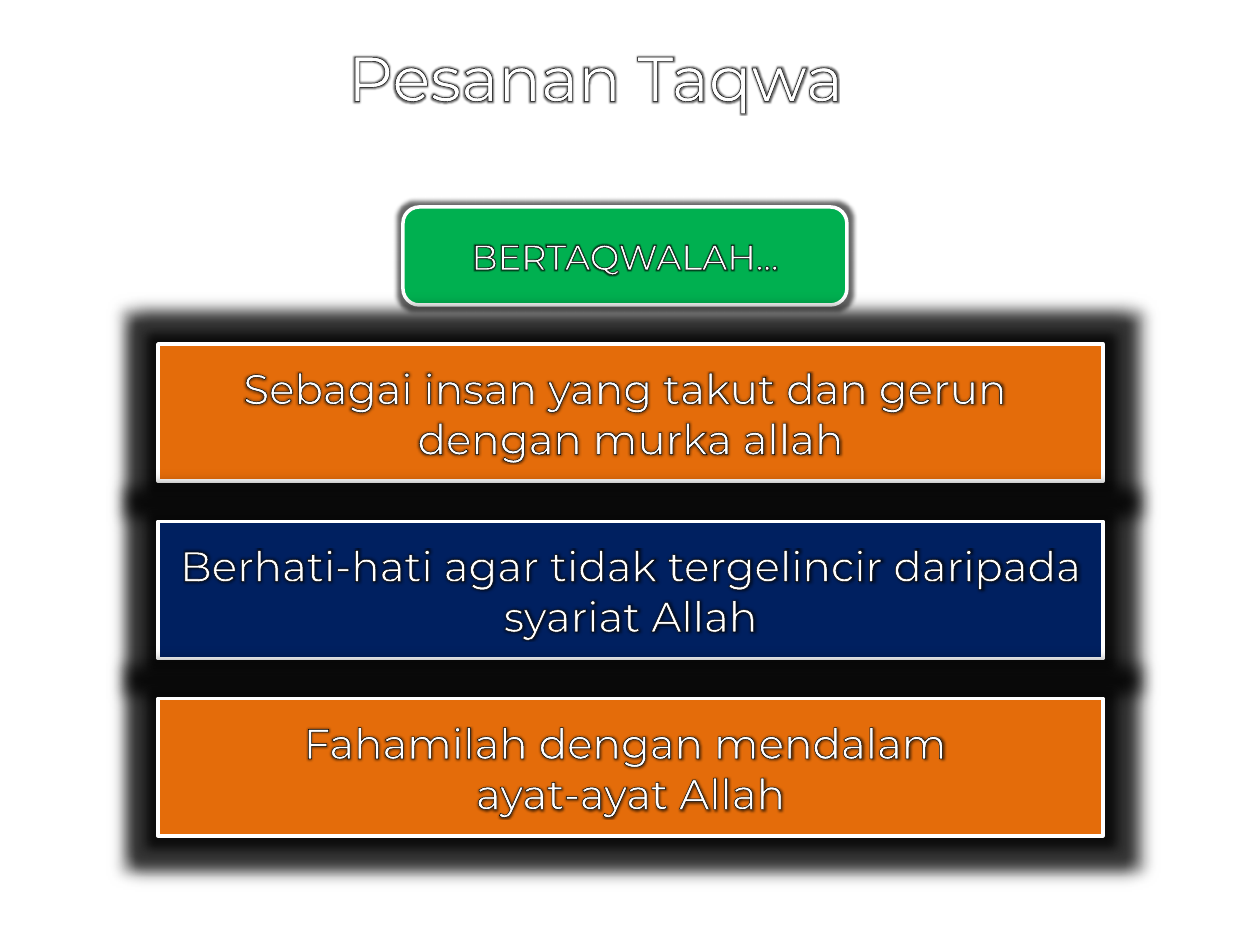
from lxml.etree import SubElement
from pptx import Presentation
from pptx.dml.color import RGBColor
from pptx.enum.shapes import MSO_SHAPE as SHAPE
from pptx.enum.text import MSO_ANCHOR as ANCHOR, MSO_AUTO_SIZE as AUTO, PP_ALIGN as ALIGN
from pptx.oxml.ns import qn
from pptx.util import Pt

SCALE = 914400 / 126
FONT = "Montserrat"
WHITE = RGBColor(0xFF, 0xFF, 0xFF)
BLACK = RGBColor(0x00, 0x00, 0x00)
GREEN = RGBColor(0x00, 0xB0, 0x50)
ORANGE = RGBColor(0xE4, 0x6C, 0x0A)
NAVY = RGBColor(0x00, 0x20, 0x60)

ROWS = [
    (ORANGE, ["Sebagai insan yang takut dan gerun ", "dengan murka allah"]),
    (NAVY, ["Berhati-hati agar tidak tergelincir daripada syariat Allah"]),
    (ORANGE, ["Fahamilah dengan mendalam ", "ayat-ayat Allah"]),
]


def px(n):
    return round(n * SCALE)


def add_colour(parent, colour, alpha=100):
    clr = SubElement(parent, qn("a:srgbClr"), val=str(colour))
    if alpha < 100:
        SubElement(clr, qn("a:alpha"), val=str(alpha * 1000))


def add_glow(parent, radius, alpha, shadow_blur=0):
    """Add a black glow, and a soft shadow when a blur is given."""
    effects = SubElement(parent, qn("a:effectLst"))
    glow = SubElement(effects, qn("a:glow"), rad=str(Pt(radius)))
    add_colour(glow, BLACK, alpha)
    if shadow_blur:
        shadow = SubElement(effects, qn("a:outerShdw"), blurRad=str(Pt(shadow_blur)),
                            sx="102000", sy="110000", algn="ctr", rotWithShape="0")
        add_colour(shadow, BLACK, 70)


def write_lines(tf, lines, size):
    """Write centred white lines with a black outline and glow."""
    tf.word_wrap = True
    for i, line in enumerate(lines):
        p = tf.add_paragraph() if i else tf.paragraphs[0]
        p.alignment = ALIGN.CENTER
        r = p.add_run()
        r.text = line
        rpr = r._r.get_or_add_rPr()
        ln = SubElement(rpr, qn("a:ln"), w=str(Pt(0.75)))
        add_colour(SubElement(ln, qn("a:solidFill")), BLACK)
        add_colour(SubElement(rpr, qn("a:solidFill")), WHITE)
        add_glow(rpr, 3, 60)
        r.font.size = Pt(size)
        r.font.name = FONT


def add_box(slide, kind, box, fill, lines, size, glow, shadow_blur=0):
    sp = slide.shapes.add_shape(kind, *map(px, box))
    sp.fill.solid()
    sp.fill.fore_color.rgb = fill
    sp.line.color.rgb = WHITE
    sp.line.width = Pt(2)
    add_glow(sp._element.spPr, glow, 60, shadow_blur)
    sp.text_frame.vertical_anchor = ANCHOR.MIDDLE
    write_lines(sp.text_frame, lines, size)


def add_rows(slide, box, gap):
    left, top, width, height = box
    row_height = (height - gap * (len(ROWS) - 1)) / len(ROWS)
    for i, (fill, lines) in enumerate(ROWS):
        row = (left, top + i * (row_height + gap), width, row_height)
        add_box(slide, SHAPE.RECTANGLE, row, fill, lines, 24, 11, 5)


def add_title(slide, box):
    title = slide.shapes.title
    title.left, title.top, title.width, title.height = map(px, box)
    tf = title.text_frame
    tf.auto_size = AUTO.SHAPE_TO_FIT_TEXT
    tf.vertical_anchor = ANCHOR.TOP
    write_lines(tf, ["Pesanan Taqwa"], 36)


def main():
    prs = Presentation()
    prs.slide_width, prs.slide_height = px(1260), px(945)
    slide = prs.slides.add_slide(prs.slide_layouts[5])
    add_title(slide, (69, 32, 1053, 89))
    add_box(slide, SHAPE.ROUNDED_RECTANGLE, (403, 207, 444, 98), GREEN,
            ["BERTAQWALAH…"], 20, 5)
    add_rows(slide, (158, 344, 945, 492), 40)
    prs.save("out.pptx")


if __name__ == "__main__":
    main()
